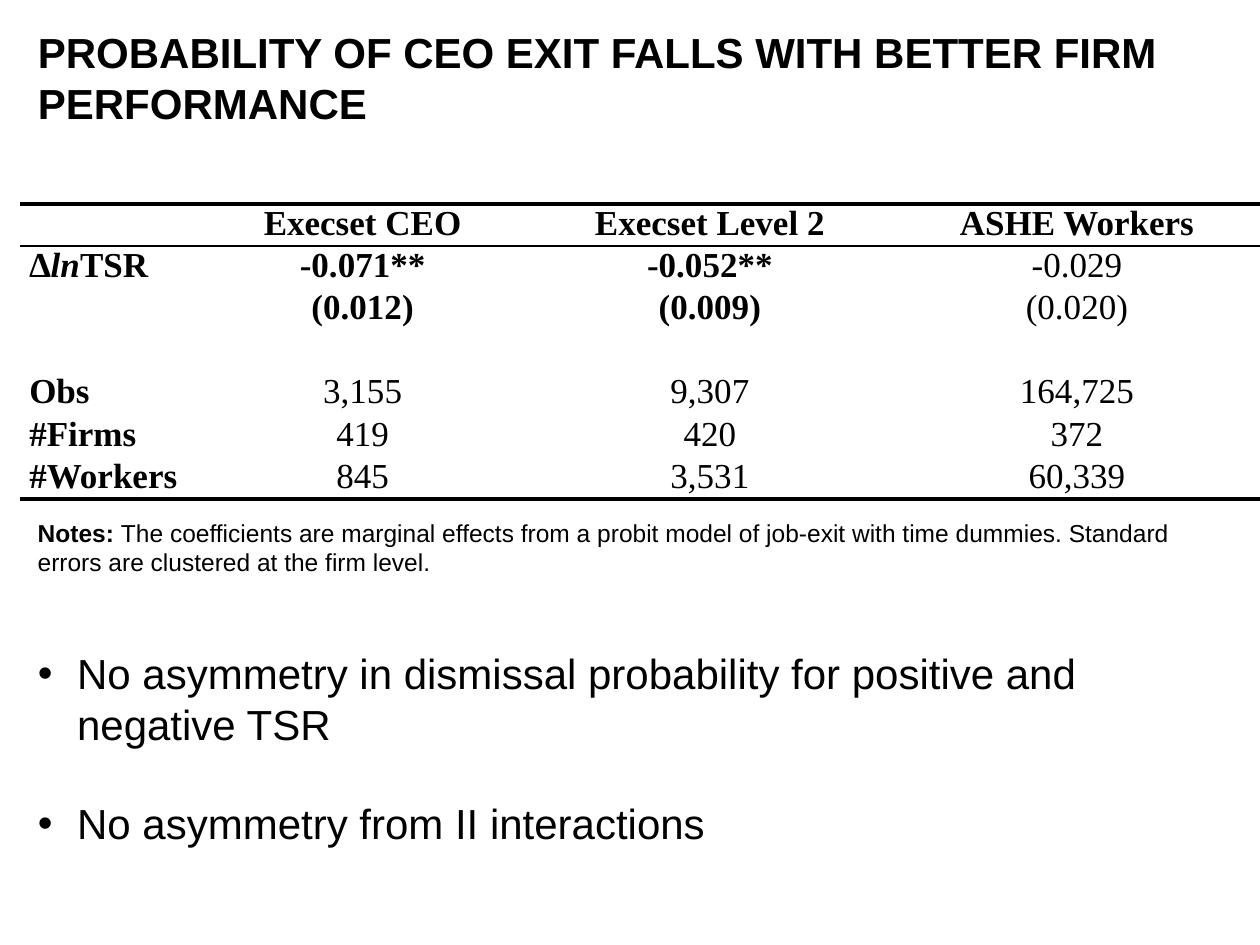
from lxml.etree import SubElement as Sub
from pptx import Presentation
from pptx.dml.color import RGBColor
from pptx.enum.text import MSO_ANCHOR, MSO_AUTO_SIZE, PP_ALIGN
from pptx.oxml.ns import qn
from pptx.util import Cm, Pt

INK = "000000"
SANS, SERIF = "Arial", "Times New Roman"
PLAIN = "{2D5ABB26-0587-4C30-8999-92F81FD0307C}"  # table style without grid

TITLE = ["PROBABILITY OF CEO EXIT FALLS WITH BETTER FIRM", "PERFORMANCE"]
ROWS = [
    ["", "Execset CEO", "Execset Level 2", "ASHE Workers"],
    ["∆lnTSR", "-0.071**", "-0.052**", "-0.029"],
    ["", "(0.012)", "(0.009)", "(0.020)"],
    ["", "", "", ""],
    ["Obs", "3,155", "9,307", "164,725"],
    ["#Firms", "419", "420", "372"],
    ["#Workers", "845", "3,531", "60,339"],
]
NOTES = [
    ("Notes: ", True),
    ("The coefficients are marginal effects from a probit model of job-exit "
     "with time dummies. Standard errors are clustered at the firm level.", False),
]
POINTS = [
    "No asymmetry in dismissal probability for positive and negative TSR",
    "No asymmetry from II interactions",
]
WIDTHS = [3.6, 6.6, 7.4, 7.4]
ROW_H = 0.85
LEFT, WIDE = 0.51, 24.56
# line widths in points, from the table's top edge down to its bottom edge
RULES = [3, 1] + [0] * (len(ROWS) - 2) + [3]


def color(code):
    return RGBColor.from_string(code)


def add_run(para, text, size, face, bold=False, italic=False):
    run = para.add_run()
    run.text = text
    font = run.font
    font.size, font.name, font.bold, font.italic = Pt(size), face, bold, italic
    font.color.rgb = color(INK)


def place(shape, top, high):
    """Move a text shape to the common left edge and return its frame."""
    shape.left, shape.top = Cm(LEFT), Cm(top)
    shape.width, shape.height = Cm(WIDE), Cm(high)
    frame = shape.text_frame
    frame.word_wrap = True
    frame.auto_size = MSO_AUTO_SIZE.NONE
    frame.vertical_anchor = MSO_ANCHOR.TOP
    return frame


def new_para(frame, index):
    para = frame.add_paragraph() if index else frame.paragraphs[0]
    para.alignment = PP_ALIGN.LEFT
    para.space_before = Pt(0)
    return para


def add_rule(cell, side, width):
    """Draw one side of a cell; a width of 0 hides it."""
    line = Sub(cell._tc.get_or_add_tcPr(), qn(f"a:ln{side}"), w=str(Pt(width)))
    if width:
        Sub(Sub(line, qn("a:solidFill")), qn("a:srgbClr"), val=INK)
    else:
        Sub(line, qn("a:noFill"))


def add_bullet(para):
    props = para._p.get_or_add_pPr()
    props.set("marL", str(Cm(0.79)))
    props.set("indent", str(-Cm(0.79)))
    Sub(props, qn("a:buFont"), typeface=SANS)
    Sub(props, qn("a:buChar"), char="•")


def fill_cell(cell, row, col, text):
    cell.margin_left = cell.margin_right = Cm(0.18)
    cell.margin_top = cell.margin_bottom = 0
    add_rule(cell, "T", RULES[row])
    add_rule(cell, "B", RULES[row + 1])
    cell.fill.background()
    para = cell.text_frame.paragraphs[0]
    para.alignment = PP_ALIGN.CENTER if col else PP_ALIGN.JUSTIFY
    strong = row == 0 or col == 0 or (row < 3 and col < 3)
    head, mid, tail = text.partition("ln")
    for part, slant in ((head, False), (mid, True), (tail, False)):
        if part:
            add_run(para, part, 20, SERIF, strong, slant)


def add_results(slide):
    frame = slide.shapes.add_table(len(ROWS), len(WIDTHS), Cm(0.41), Cm(4.11),
                                   Cm(sum(WIDTHS)), Cm(ROW_H * len(ROWS)))
    table = frame.table
    table.first_row = table.horz_banding = False
    frame._element.find(".//" + qn("a:tableStyleId")).text = PLAIN
    for col, width in zip(table.columns, WIDTHS):
        col.width = Cm(width)
    for r, row in enumerate(ROWS):
        table.rows[r].height = Cm(ROW_H)
        for c, text in enumerate(row):
            fill_cell(table.cell(r, c), r, c, text)


def main():
    deck = Presentation()
    deck.slide_width, deck.slide_height = Cm(25.4), Cm(19.05)
    slide = deck.slides.add_slide(deck.slide_layouts[1])
    add_results(slide)

    frame = place(slide.shapes.title, 0.41, 2.31)
    for i, text in enumerate(TITLE):
        add_run(new_para(frame, i), text, 24, SANS, True)

    frame = place(slide.shapes.add_textbox(0, 0, 0, 0), 10.31, 1.45)
    para = new_para(frame, 0)
    for text, bold in NOTES:
        add_run(para, text, 14, SANS, bold)

    frame = place(slide.placeholders[1], 12.93, 4.37)
    for i, text in enumerate(POINTS):
        para = new_para(frame, i)
        para.space_before = Pt(28 * i)
        add_bullet(para)
        add_run(para, text, 24, SANS)

    deck.save("out.pptx")


if __name__ == "__main__":
    main()
